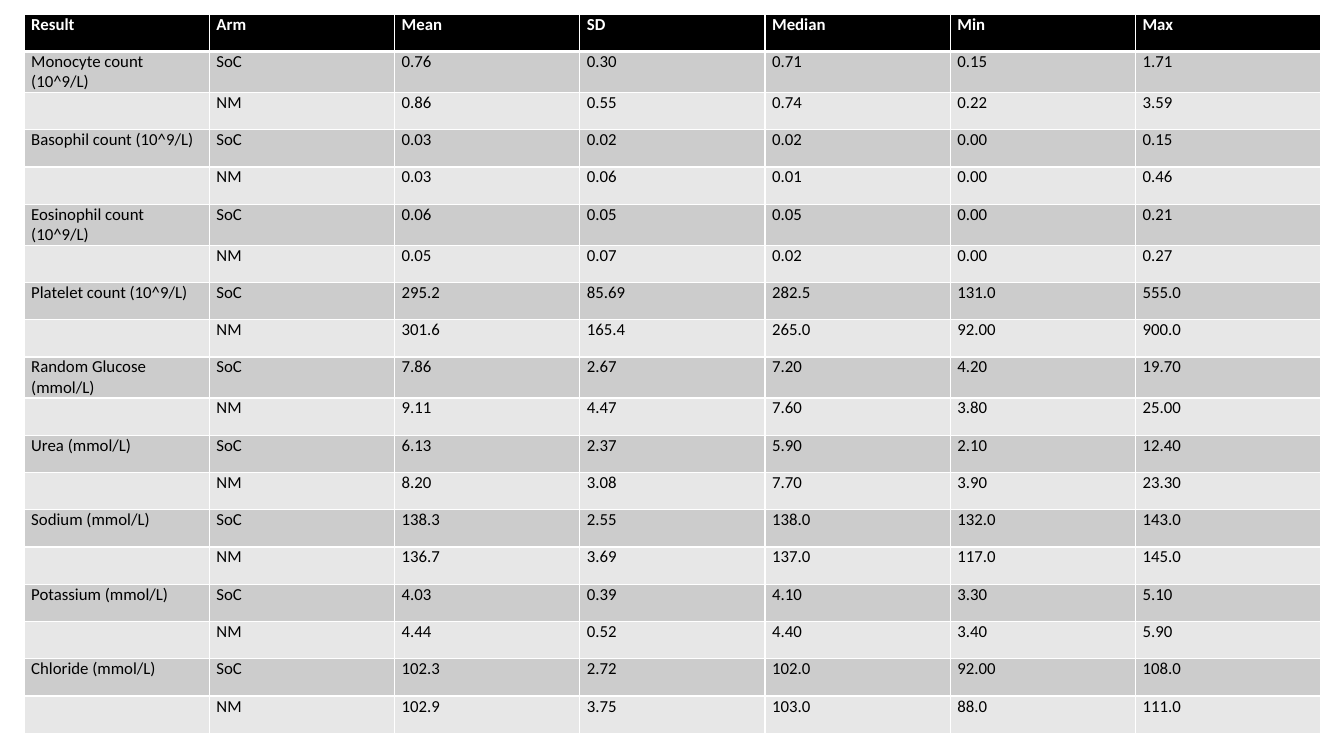
from lxml import etree
from pptx import Presentation
from pptx.dml.color import RGBColor
from pptx.oxml.ns import qn
from pptx.util import Inches, Pt

HEAD = ["Result", "Arm", "Mean", "SD", "Median", "Min", "Max"]
TESTS = [
    ("Monocyte count (10^9/L)", "0.76 0.30 0.71 0.15 1.71", "0.86 0.55 0.74 0.22 3.59"),
    ("Basophil count (10^9/L)", "0.03 0.02 0.02 0.00 0.15", "0.03 0.06 0.01 0.00 0.46"),
    ("Eosinophil count (10^9/L)", "0.06 0.05 0.05 0.00 0.21", "0.05 0.07 0.02 0.00 0.27"),
    ("Platelet count (10^9/L)", "295.2 85.69 282.5 131.0 555.0", "301.6 165.4 265.0 92.00 900.0"),
    ("Random Glucose (mmol/L)", "7.86 2.67 7.20 4.20 19.70", "9.11 4.47 7.60 3.80 25.00"),
    ("Urea (mmol/L)", "6.13 2.37 5.90 2.10 12.40", "8.20 3.08 7.70 3.90 23.30"),
    ("Sodium (mmol/L)", "138.3 2.55 138.0 132.0 143.0", "136.7 3.69 137.0 117.0 145.0"),
    ("Potassium (mmol/L)", "4.03 0.39 4.10 3.30 5.10", "4.44 0.52 4.40 3.40 5.90"),
    ("Chloride (mmol/L)", "102.3 2.72 102.0 92.00 108.0", "102.9 3.75 103.0 88.0 111.0"),
]


def paint(target, color):
    target.rgb = RGBColor.from_string(color)


def edge(cell, side, width):
    line = etree.SubElement(cell._tc.get_or_add_tcPr(), qn("a:ln" + side), w=str(Pt(width)))
    fill = etree.SubElement(line, qn("a:solidFill"))
    etree.SubElement(fill, qn("a:srgbClr"), val="FFFFFF")


rows = [HEAD]
for name, soc, nm in TESTS:
    rows.append([name, "SoC"] + soc.split())
    rows.append(["", "NM"] + nm.split())

deck = Presentation()
deck.slide_width = Inches(13.33)
deck.slide_height = Inches(7.5)
slide = deck.slides.add_slide(deck.slide_layouts[6])

frame = slide.shapes.add_table(
    len(rows), len(HEAD), Inches(0.24), Inches(0.14), Inches(12.86), Inches(7.03))
table = frame.table
for col in table.columns:
    col.width = Inches(12.86 / len(HEAD))

for i, row in enumerate(rows):
    table.rows[i].height = Inches(0.37)
    top = i == 0
    back = "000000" if top else "CCCCCC" if i % 2 else "E7E7E7"
    for j, text in enumerate(row):
        cell = table.cell(i, j)
        cell.margin_left = cell.margin_right = Inches(0.07)
        cell.margin_top = cell.margin_bottom = 0
        for side in "LRTB":
            edge(cell, side, 3 if top and side == "B" else 1)
        cell.fill.solid()
        paint(cell.fill.fore_color, back)
        if text:
            run = cell.text_frame.paragraphs[0].add_run()
            run.text = text
            run.font.name = "Calibri"
            run.font.size = Pt(12)
            run.font.bold = top
            paint(run.font.color, "FFFFFF" if top else "000000")

deck.save("out.pptx")
